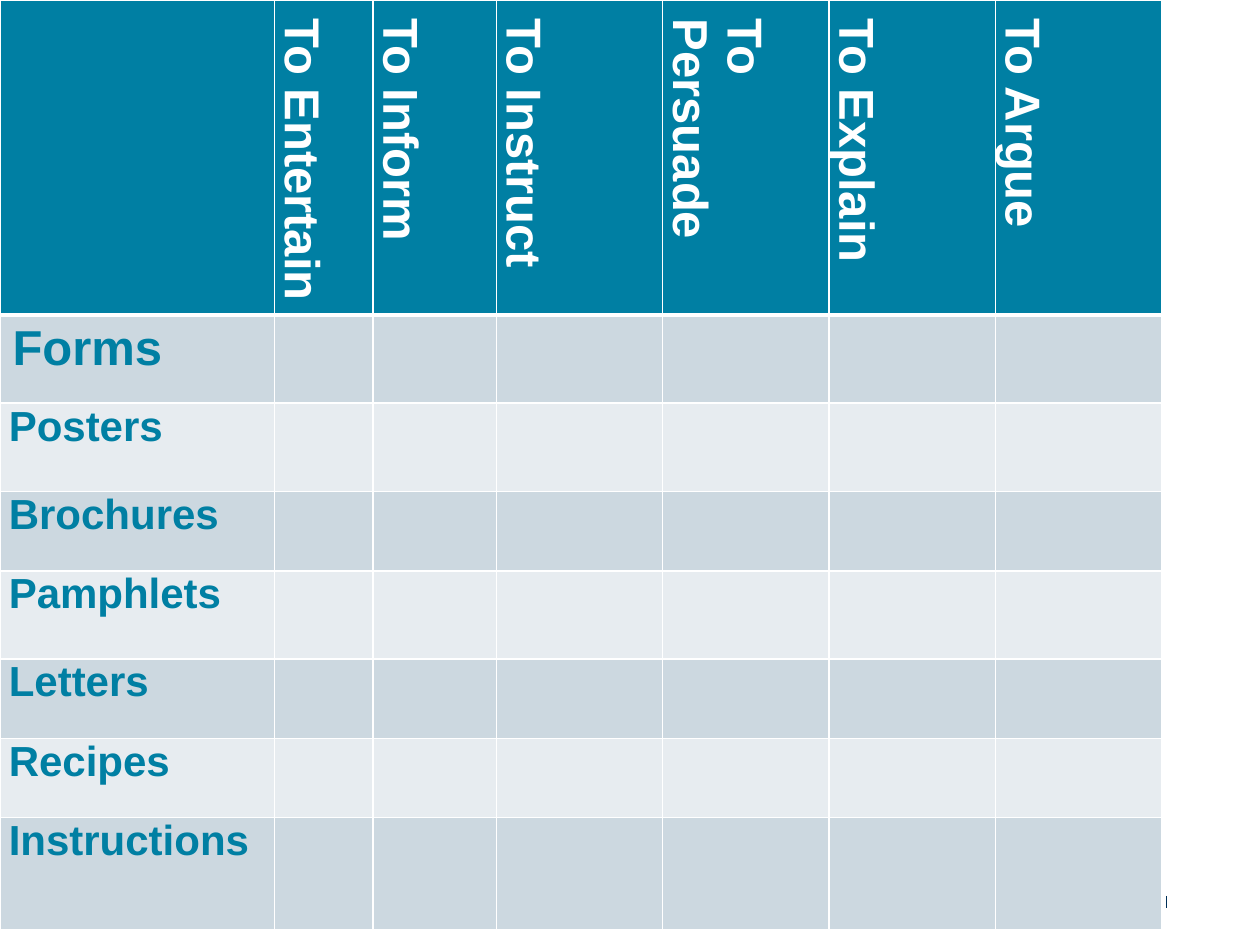
"""Build a slide with a grid of text forms against author's purposes."""
from lxml import etree
from pptx import Presentation
from pptx import util as u
from pptx.dml.color import RGBColor
from pptx.enum import shapes, text
from pptx.oxml.ns import qn

COLORS = {"teal": "007FA3", "dark_band": "CCD8E0", "light_band": "E7ECF0",
          "white": "FFFFFF", "navy": "003057"}
PURPOSES = ["Entertain", "Inform", "Instruct", "Persuade", "Explain", "Argue"]
FORMS = ["Forms", "Posters", "Brochures", "Pamphlets", "Letters", "Recipes", "Instructions"]
COLUMN_WIDTHS = [2.18, 0.78, 0.98] + [1.32] * 4
ROW_HEIGHTS = [2.5, 0.7, 0.7, 0.63, 0.7, 0.63, 0.63, 0.89]


def add_border(cell, side, points):
    edge = etree.SubElement(cell._tc.get_or_add_tcPr(), qn(f"a:ln{side}"), w=str(u.Pt(points)))
    fill = etree.SubElement(edge, qn("a:solidFill"))
    etree.SubElement(fill, qn("a:srgbClr"), val=COLORS["white"])


def write_label(cell, label, size, color, justified):
    paragraph = cell.text_frame.paragraphs[0]
    paragraph.text = label
    paragraph.font.name = "Arial"
    paragraph.font.size = u.Pt(size)
    paragraph.font.bold = True
    paragraph.font.color.rgb = RGBColor.from_string(COLORS[color])
    if justified:
        paragraph.alignment = text.PP_ALIGN.JUSTIFY
        cell.margin_left = cell.margin_right = u.Inches(0.07)
        cell.margin_top = cell.margin_bottom = 0
    return paragraph


deck = Presentation()
deck.slide_width, deck.slide_height = u.Inches(10), u.Inches(7.5)
slide = deck.slides.add_slide(deck.slide_layouts[6])

tick = slide.shapes.add_connector(
    shapes.MSO_CONNECTOR.STRAIGHT, u.Inches(9.26), u.Inches(7.11), u.Inches(9.26), u.Inches(7.21))
tick.line.color.rgb = RGBColor.from_string(COLORS["navy"])
tick.line.width = u.Pt(0.5)
etree.SubElement(tick._element.spPr, qn("a:effectLst"))

grid = slide.shapes.add_table(
    len(ROW_HEIGHTS), len(COLUMN_WIDTHS), 0, 0,
    u.Inches(sum(COLUMN_WIDTHS)), u.Inches(sum(ROW_HEIGHTS))).table
for column, width in zip(grid.columns, COLUMN_WIDTHS):
    column.width = u.Inches(width)
for row, height in zip(grid.rows, ROW_HEIGHTS):
    row.height = u.Inches(height)

for index, row in enumerate(grid.rows):
    band = "teal" if index == 0 else "dark_band" if index % 2 else "light_band"
    for cell in row.cells:
        for side in "LRTB":
            under_header = (index, side) in [(0, "B"), (1, "T")]
            add_border(cell, side, 3 if under_header else 1)
        cell.fill.solid()
        cell.fill.fore_color.rgb = RGBColor.from_string(COLORS[band])

for column, purpose in enumerate(PURPOSES, 1):
    heading = grid.cell(0, column)
    heading._tc.get_or_add_tcPr().set("vert", "vert")
    paragraph = write_label(heading, f"To {purpose}", 28, "white", True)
    paragraph._p.get_or_add_pPr().set("marL", str(u.Inches(0.08)))

for row, form in enumerate(FORMS, 1):
    write_label(grid.cell(row, 0), form, 28 if row == 1 else 24, "teal", row > 1)

deck.save("out.pptx")
